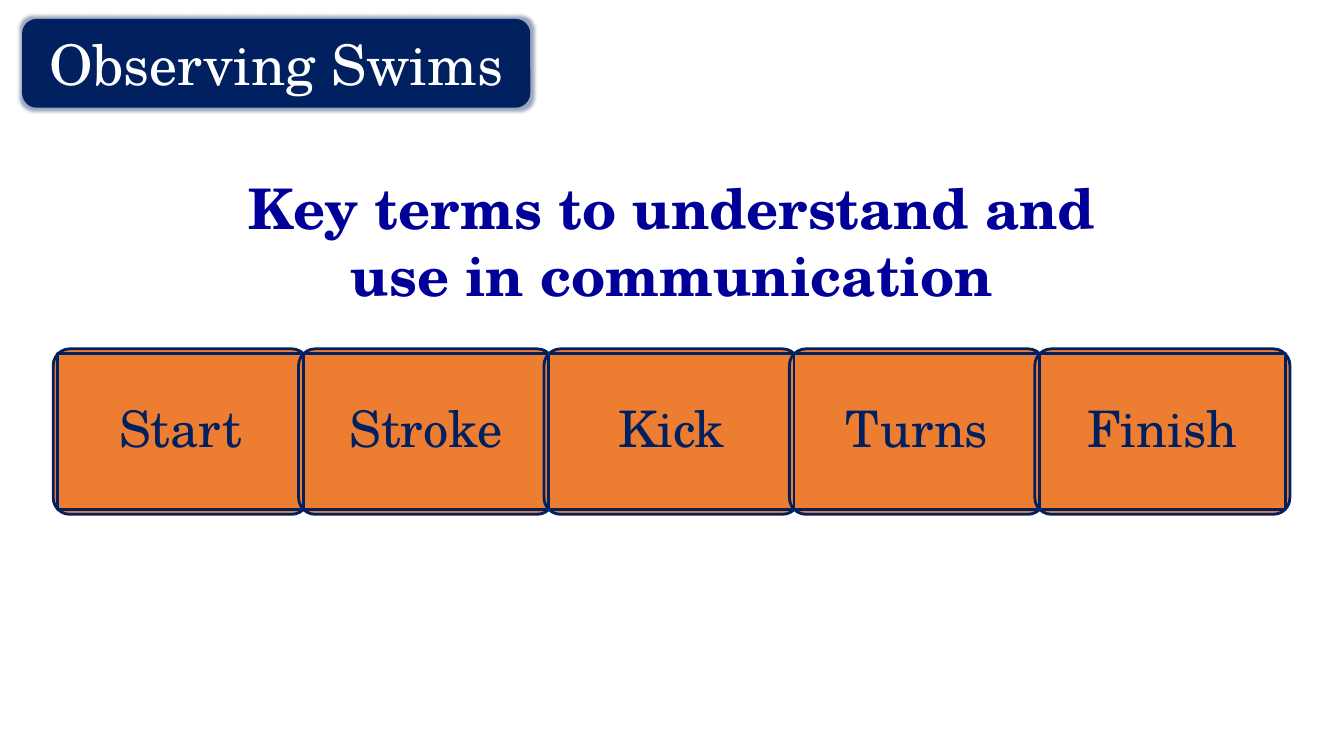
from dataclasses import dataclass

from lxml import etree
from pptx import Presentation
from pptx.dml.color import RGBColor
from pptx.enum.shapes import MSO_SHAPE
from pptx.enum.text import MSO_ANCHOR, MSO_AUTO_SIZE, PP_ALIGN
from pptx.oxml.ns import qn
from pptx.util import Pt

RECT = MSO_SHAPE.RECTANGLE
ROUNDED = MSO_SHAPE.ROUNDED_RECTANGLE
MIDDLE = MSO_ANCHOR.MIDDLE
CENTER = PP_ALIGN.CENTER
GROW = MSO_AUTO_SIZE.SHAPE_TO_FIT_TEXT


@dataclass(frozen=True)
class Theme:
    font: str = "TeX Gyre Schola"
    navy: str = "002060"
    orange: str = "ED7D31"
    blue: str = "000099"
    white: str = "FFFFFF"
    heading_size: int = 40
    term_size: int = 36


THEME = Theme()
TERMS = ["Start", "Stroke", "Kick", "Turns", "Finish"]
TERM_LEFT, TERM_TOP, TERM_STEP = 38, 249.2, 175.3
FRAME_WIDTH, FRAME_HEIGHT = 182.2, 118.2
FRAME_INSET = 3.25


def set_values(target, values):
    for name, value in values.items():
        setattr(target, name, value)


def write_text(shape, text, size, color, bold=False, spacing=None, frame_format=None):
    frame = shape.text_frame
    set_values(frame, {"word_wrap": True, **(frame_format or {})})
    paragraph = frame.paragraphs[0]
    paragraph.text = text
    set_values(paragraph, {"alignment": CENTER, "line_spacing": spacing})
    font = paragraph.runs[0].font
    set_values(font, {"name": THEME.font, "size": Pt(size), "bold": bold})
    font.color.rgb = RGBColor.from_string(color)


def add_panel(shapes, kind, box, fill, outline=None):
    panel = shapes.add_shape(kind, *map(Pt, box))
    panel.shadow.inherit = False
    panel.fill.solid()
    panel.fill.fore_color.rgb = RGBColor.from_string(fill)
    if outline:
        panel.line.color.rgb = RGBColor.from_string(outline)
        panel.line.width = Pt(2)
    else:
        panel.line.fill.background()
    return panel


def add_glow(shape, color, radius, opacity):
    effects = shape._element.spPr.find(qn("a:effectLst"))
    glow = etree.SubElement(effects, qn("a:glow"), rad=str(Pt(radius)))
    tint = etree.SubElement(glow, qn("a:srgbClr"), val=color)
    etree.SubElement(tint, qn("a:alpha"), val=str(opacity * 1000))


def add_title(slide, text):
    title = add_panel(slide.shapes, ROUNDED, (15.8, 13.5, 363, 63.5), THEME.navy)
    add_glow(title, THEME.navy, 5, 40)
    write_text(title, text, THEME.heading_size, THEME.white,
               frame_format={"vertical_anchor": MIDDLE})


def add_heading(slide, text):
    heading = slide.shapes.add_textbox(Pt(134), Pt(120.2), Pt(692), Pt(104.4))
    write_text(heading, text, THEME.heading_size, THEME.blue, bold=True,
               frame_format={"auto_size": GROW})


def add_term(slide, term, left):
    card = slide.shapes.add_group_shape().shapes
    outer = (left, TERM_TOP, FRAME_WIDTH, FRAME_HEIGHT)
    inner = (left + FRAME_INSET, TERM_TOP + FRAME_INSET,
             FRAME_WIDTH - 2 * FRAME_INSET, FRAME_HEIGHT - 2 * FRAME_INSET)
    frame = add_panel(card, ROUNDED, outer, THEME.orange, THEME.navy)
    frame.adjustments[0] = 0.1
    label = add_panel(card, RECT, inner, THEME.orange, THEME.navy)
    margins = ("margin_left", "margin_top", "margin_right", "margin_bottom")
    write_text(label, term, THEME.term_size, THEME.navy, spacing=0.9,
               frame_format={"vertical_anchor": MIDDLE, **dict.fromkeys(margins, Pt(11.5))})


def main():
    presentation = Presentation()
    set_values(presentation, {"slide_width": Pt(960), "slide_height": Pt(540)})
    slide = presentation.slides.add_slide(presentation.slide_layouts[6])
    for index, term in enumerate(TERMS):
        add_term(slide, term, TERM_LEFT + index * TERM_STEP)
    add_heading(slide, "Key terms to understand and use in communication")
    add_title(slide, "Observing Swims")
    presentation.save("out.pptx")


if __name__ == "__main__":
    main()
